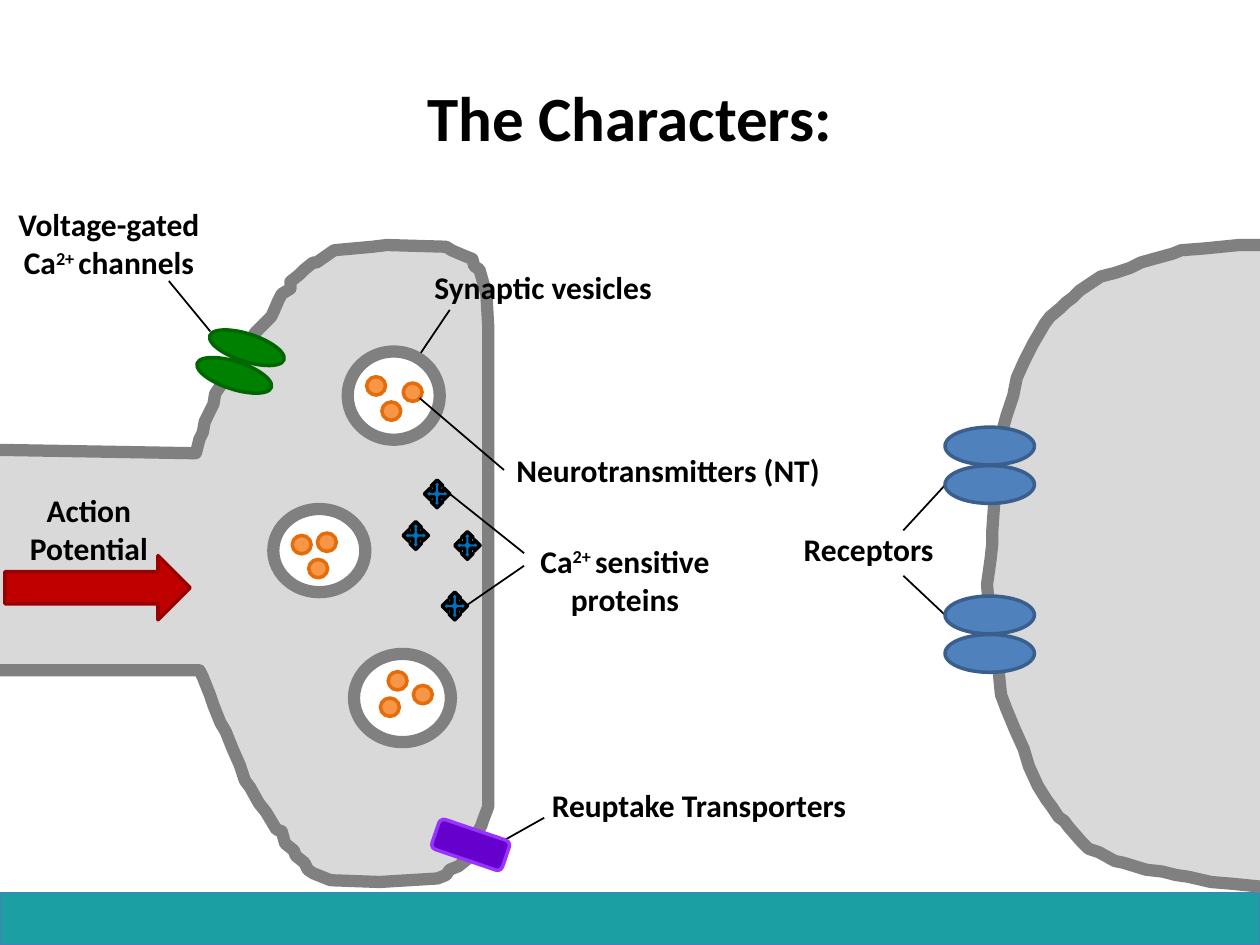
from lxml.etree import SubElement
from pptx import Presentation
from pptx.dml.color import RGBColor
from pptx.enum.shapes import MSO_CONNECTOR, MSO_SHAPE as Preset
from pptx.enum.text import MSO_ANCHOR, PP_ALIGN as Align
from pptx.oxml.ns import qn
from pptx.util import Pt

BLACK, MEMBRANE, CYTOPLASM = "000000", "808080", "D9D9D9"
MEMBRANE_WIDTH = 7

# Cell outlines as (x, y) points
AXON_TERMINAL = [
    (-5, 257), (111.6, 259.2), (113.8, 250.6), (116, 247), (117.4, 241.2),
    (120.2, 234.7), (121.7, 231), (123, 225.4), (127.4, 219), (133, 210),
    (136.8, 203.8), (139.7, 198.7), (144, 193), (146, 190), (150.5, 186.5),
    (154.8, 181.4), (155.5, 178.6), (159, 172), (160.6, 168.5), (165.6, 164.9),
    (166.3, 161.3), (171.4, 157), (173.5, 154), (178.6, 150.5), (180.7, 149.8),
    (190.8, 143.3), (213, 141), (221, 140.4), (254.9, 141.1), (257.8, 143.3),
    (265, 146), (270, 148.3), (271.4, 152), (274.3, 154), (275.8, 161.3),
    (278, 167.8), (278.6, 186.5), (278.6, 460.8), (275.8, 468.7), (275, 472.3),
    (271.4, 478.8), (268.6, 484.6), (267, 491), (262, 494.6), (257, 496.8),
    (254.9, 499.7), (249.8, 501.8), (217.4, 504), (188.6, 503.3), (183.6, 501),
    (178.6, 499), (175.7, 496.8), (173.5, 493.2), (169.2, 488.9), (168.5, 486),
    (163.4, 481.7), (160.6, 475.2), (158.4, 474.5), (154.8, 468.7), (152, 464.4),
    (148.3, 459.4), (142.6, 450), (139.7, 446.4), (136.8, 437), (133.2, 427.7),
    (128.9, 418.3), (126, 412.6), (122.4, 403.2), (120.2, 396.7), (115.9, 387.4),
    (113.8, 383), (-5.8, 383),
]
RECEIVING_CELL = [
    (723.6, 506.9), (704.2, 505.4), (691.9, 504), (679, 501), (671.8, 500.4),
    (663.8, 498.2), (655.2, 496.8), (642.2, 493.2), (637.2, 491.8), (627.8, 487.4),
    (622, 484.6), (617.8, 481), (611.3, 473), (608.4, 469.4), (604.8, 466.6),
    (601.2, 460.8), (597.6, 457.2), (592.6, 449.3), (588.2, 438.5), (585.4, 427.7),
    (579.6, 416.9), (575.3, 405.4), (572.4, 396.7), (570.2, 377.3), (567.4, 370.8),
    (565.9, 357), (564.5, 334), (565.9, 319.7), (567.4, 311), (566.6, 303.8),
    (568, 289.4), (570.2, 268.6), (572.4, 249), (575.3, 237.6), (578.9, 226),
    (581, 216), (584.6, 207.4), (589.7, 196.6), (596.9, 185), (599.8, 181.4),
    (605.5, 176.4), (609, 172.8), (613.4, 170), (617, 165.6), (629.3, 158.4),
    (637.2, 156.2), (645.8, 153.4), (651.6, 149.8), (658.8, 147.6), (669.6, 144.7),
    (674.6, 143.3), (688.3, 141.8), (708.5, 140.4), (725.8, 140.4),
]

# Vesicle box, then the corners of its neurotransmitters
VESICLES = [
    ((198.7, 200.9, 52.6, 50.4), [(209.5, 215.3), (230.4, 218.9), (218.2, 229.7)]),
    ((156.2, 290.9, 52.6, 47.5), [(167, 306), (181.4, 304.6), (176.4, 319.7)]),
    ((202.3, 373.7, 55.4, 50.4), [(221.8, 383.8), (236.2, 391.7), (217.4, 398.9)]),
]
PROTEINS = [(230.4, 298.1), (242.6, 274.3), (259.9, 303.8), (252.7, 338.4)]

# Label box, whether it wraps, and runs (a run of "2+ " is raised)
LABELS = [
    ((-5.8, 113.8, 136.1, 51.1), True, ["Voltage-gated Ca", "2+ ", "channels"]),
    ((241.2, 149.8, 139.7, 28.8), False, ["Synaptic vesicles"]),
    ((288, 254.2, 190.1, 28.8), False, ["Neurotransmitters (NT)"]),
    ((452.2, 299.5, 89.3, 28.8), False, ["Receptors"]),
    ((-0.7, 277.2, 103, 51.1), True, ["Action Potential"]),
    ((308.2, 445.7, 187.9, 28.8), False, ["Reuptake Transporters"]),
    ((290.2, 306, 133.9, 51.1), True, ["Ca", "2+ ", "sensitive proteins"]),
]
POINTERS = [
    (96.5, 160.6, 120.2, 189.4),   # calcium channels
    (257, 177.1, 240.5, 201.6),    # vesicle
    (288, 268.6, 239.8, 227.5),    # neurotransmitter
    (516.2, 303.1, 540, 277.2),    # upper receptors
    (516.2, 329, 540, 351.4),      # lower receptors
    (288, 480.2, 311, 467.3),      # reuptake transporter
    (299.5, 316.1, 257, 282.2),    # upper protein
    (299.5, 323.3, 267.1, 345.6),  # lower protein
]


def color(hex_code):
    return RGBColor.from_string(hex_code)


def paint(part, fill, line, width):
    part.shadow.inherit = False
    part.fill.solid()
    part.fill.fore_color.rgb = color(fill)
    part.line.color.rgb = color(line)
    part.line.width = Pt(width)


def add_part(shapes, preset, box, fill, line, width=2, rotation=0):
    part = shapes.add_shape(preset, *map(Pt, box))
    part.rotation = rotation
    paint(part, fill, line, width)


def add_cell(shapes, outline):
    builder = shapes.build_freeform(*outline[0], scale=Pt(1))
    builder.add_line_segments(outline[1:], close=True)
    paint(builder.convert_to_shape(), CYTOPLASM, MEMBRANE, MEMBRANE_WIDTH)


def add_vesicle(shapes, box, transmitters):
    vesicle = shapes.add_group_shape().shapes
    add_part(vesicle, Preset.OVAL, box, "FFFFFF", MEMBRANE, MEMBRANE_WIDTH)
    for corner in transmitters:
        add_part(vesicle, Preset.OVAL, (*corner, 10.8, 10.5), "F79646", "E46C0A")


def style_font(font, size):
    font.name, font.size, font.bold = "Calibri", Pt(size), True
    font.color.rgb = color(BLACK)


def add_label(shapes, box, wraps, texts):
    frame = shapes.add_textbox(*map(Pt, box)).text_frame
    frame.word_wrap = wraps
    label = frame.paragraphs[0]
    label.alignment = Align.CENTER if wraps else Align.LEFT
    style_font(label.font, 18)
    for text in texts:
        run = label.add_run()
        run.text = text
        if text == "2+ ":
            run.font._element.set("baseline", "30000")


def add_pointer(shapes, ends):
    pointer = shapes.add_connector(MSO_CONNECTOR.STRAIGHT, *map(Pt, ends))
    pointer.line.color.rgb = color(BLACK)
    pointer.line.width = Pt(1)
    SubElement(pointer._element.spPr, qn("a:effectLst"))


def set_title(title, text):
    title.left, title.top, title.width, title.height = map(Pt, (36, 21.6, 648, 90))
    title.text_frame.text = text
    title.text_frame.vertical_anchor = MSO_ANCHOR.MIDDLE
    heading = title.text_frame.paragraphs[0]
    heading.alignment = Align.CENTER
    style_font(heading.font, 36)


def main():
    deck = Presentation()
    deck.slide_width, deck.slide_height = Pt(720), Pt(540)
    shapes = deck.slides.add_slide(deck.slide_layouts[5]).shapes

    # Footer band and title
    add_part(shapes, Preset.RECTANGLE, (0, 510, 720, 30), "1C9FA3", "4B7EBC", 0.75)
    set_title(shapes.title, "The Characters:")

    # Cells, calcium channels and vesicles
    for outline in (AXON_TERMINAL, RECEIVING_CELL):
        add_cell(shapes, outline)
    for corner in ((133.2, 176.4), (126, 192.2)):
        add_part(shapes, Preset.OVAL, (*corner, 15.8, 44.6), "008000", "006600",
                 rotation=288)
    for box, transmitters in VESICLES:
        add_vesicle(shapes, box, transmitters)

    # Labels and their pointers
    for label in LABELS:
        add_label(shapes, *label)
    for ends in POINTERS:
        add_pointer(shapes, ends)

    # Action potential, receptors, transporter and proteins
    add_part(shapes, Preset.RIGHT_ARROW, (2.9, 317.5, 105.8, 36.7), "C00000", "990000")
    for pair_top in (244.1, 340.6):
        for top in (pair_top + 22, pair_top):
            add_part(shapes, Preset.OVAL, (540, top, 51.1, 21.6), "4F81BD", "3A5F8C")
    add_part(shapes, Preset.ROUNDED_RECTANGLE, (247.7, 473.8, 42.5, 18),
             "6600CC", "9933FF", rotation=18.8)
    for corner in PROTEINS:
        add_part(shapes, Preset.QUAD_ARROW, (*corner, 14.4, 15.8), "0070C0", BLACK)

    deck.save("out.pptx")


if __name__ == "__main__":
    main()
